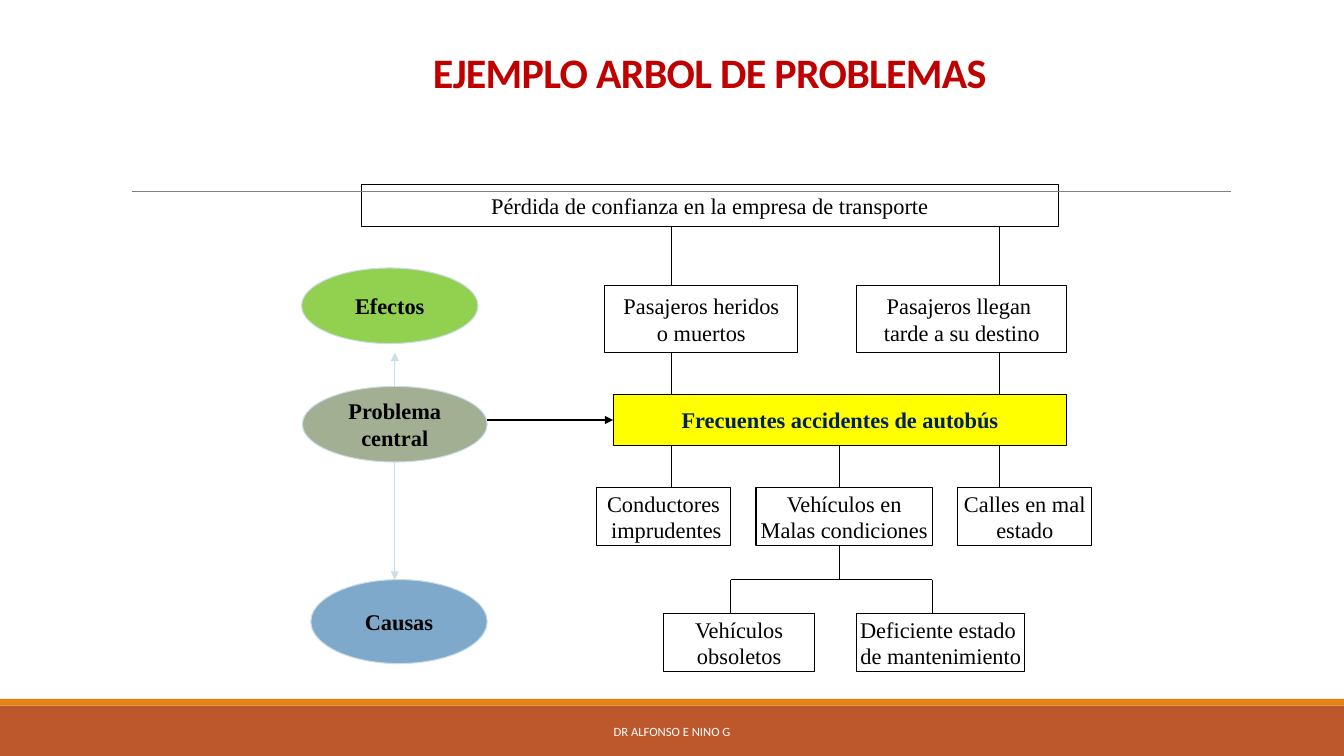
"""Build the problem tree slide on a grid of twelfths of an inch."""
from lxml import etree
from pptx import Presentation
from pptx.dml.color import RGBColor
from pptx.enum.shapes import MSO_CONNECTOR, MSO_SHAPE
from pptx.enum.text import MSO_ANCHOR, MSO_AUTO_SIZE, PP_ALIGN
from pptx.oxml.ns import qn
from pptx.util import Inches, Pt

RECT, OVAL = MSO_SHAPE.RECTANGLE, MSO_SHAPE.OVAL
LINE = MSO_CONNECTOR.STRAIGHT
MID, LOW = MSO_ANCHOR.MIDDLE, MSO_ANCHOR.BOTTOM
CENTER, FIXED = PP_ALIGN.CENTER, MSO_AUTO_SIZE.NONE
UNIT = Inches(1) // 12
BLACK, PALE, WHITE = "000000", "CCDDEA", "FFFFFF"
color = RGBColor.from_string


def write(shape, text, size=16, font="Times New Roman", ink=BLACK,
          bold=False, wrap=False, anchor=MID):
    frame = shape.text_frame
    frame.text = text
    frame.word_wrap = wrap
    frame.auto_size = FIXED
    frame.vertical_anchor = anchor
    for para in frame.paragraphs:
        para.alignment = CENTER
        face = para.runs[0].font
        face.size, face.name, face.bold = Pt(size), font, bold
        face.color.rgb = color(ink)


def grid(*cells):
    return [round(cell * UNIT) for cell in cells]


deck = Presentation()
deck.slide_width, deck.slide_height = grid(160, 90)
slide = deck.slides.add_slide(deck.slide_layouts[5])
shapes = slide.shapes

title = shapes.title
title.left, title.top, title.width, title.height = grid(33.8, 1.2, 101.4, 11)
write(title, "EJEMPLO ARBOL DE PROBLEMAS", size=30, font="Calibri",
      ink="C00000", bold=True, wrap=True, anchor=LOW)
head = title.text_frame.paragraphs[0]
head.line_spacing = 0.85
head.runs[0].font._element.set("spc", "-50")

nodes = [
    (RECT, (0, 84, 160, 6), "BD582C", None, "", {}),
    (RECT, (0, 83.2, 160, 0.8), "E48312", None, "", {}),
    (RECT, (43, 22, 83, 5), None, BLACK,
     "Pérdida de confianza en la empresa de transporte", {}),
    (RECT, (72, 34, 23, 8), None, BLACK, "Pasajeros heridos\no muertos", {}),
    (RECT, (102, 34, 25, 8), None, BLACK,
     "Pasajeros llegan \ntarde a su destino", {}),
    (RECT, (73, 47, 54, 6), "FFFF00", BLACK,
     "Frecuentes accidentes de autobús", {"ink": "002060", "bold": True}),
    (RECT, (71, 58, 16, 7), None, BLACK, "Conductores\n imprudentes", {}),
    (RECT, (90, 58, 21, 7), None, BLACK,
     "Vehículos en\nMalas condiciones", {}),
    (RECT, (114, 58, 16, 7), None, BLACK, "Calles en mal\nestado", {}),
    (RECT, (79, 73, 18, 7), None, BLACK, "Vehículos\nobsoletos", {}),
    (RECT, (102, 73, 20, 7), None, BLACK,
     "Deficiente estado \nde mantenimiento", {}),
    (OVAL, (35.9, 31.9, 21, 9), "92D050", PALE, "Efectos", {"bold": True}),
    (OVAL, (36, 46, 22, 9), "A2AF92", PALE,
     "Problema\ncentral", {"bold": True}),
    (OVAL, (37, 69, 21, 10), "7EA9CA", PALE, "Causas", {"bold": True}),
]
for kind, place, fill, edge, text, style in nodes:
    node = shapes.add_shape(kind, *grid(*place))
    node.shadow.inherit = False
    if fill:
        node.fill.solid()
        node.fill.fore_color.rgb = color(fill)
    else:
        node.fill.background()
    if edge:
        node.line.color.rgb = color(edge)
        node.line.width = Pt(0.75)
    else:
        node.line.fill.background()
    if text:
        write(node, text, **style)

foot = shapes.add_textbox(*grid(48.4, 84.7, 63.2, 4.8))
write(foot, "DR ALFONSO E NINO G", size=9, font="Calibri", ink=WHITE, wrap=True)

links = [
    ((15.7, 22.8, 146.5, 22.8), "808080", 0.5, False),
    ((47, 46, 47, 42), PALE, 0.75, True),
    ((47, 55, 47, 69), PALE, 0.75, True),
    ((58, 50, 73, 50), BLACK, 0.75, True),
    ((87, 69, 111, 69), BLACK, 0.75, False),
]
stems = [
    ((80, 119), 27, 34),
    ((80, 119), 42, 47),
    ((80, 100, 119), 53, 58),
    ((100,), 65, 69),
    ((87, 111), 69, 73),
]
for cols, top, end in stems:
    links += [((col, top, col, end), BLACK, 0.75, False) for col in cols]
for ends, ink, width, arrow in links:
    link = shapes.add_connector(LINE, *grid(*ends))
    link.line.color.rgb = color(ink)
    link.line.width = Pt(width)
    if arrow:
        tip = etree.SubElement(link.line._get_or_add_ln(), qn("a:tailEnd"))
        tip.set("type", "triangle")
    etree.SubElement(link._element.spPr, qn("a:effectLst"))

deck.save("out.pptx")
